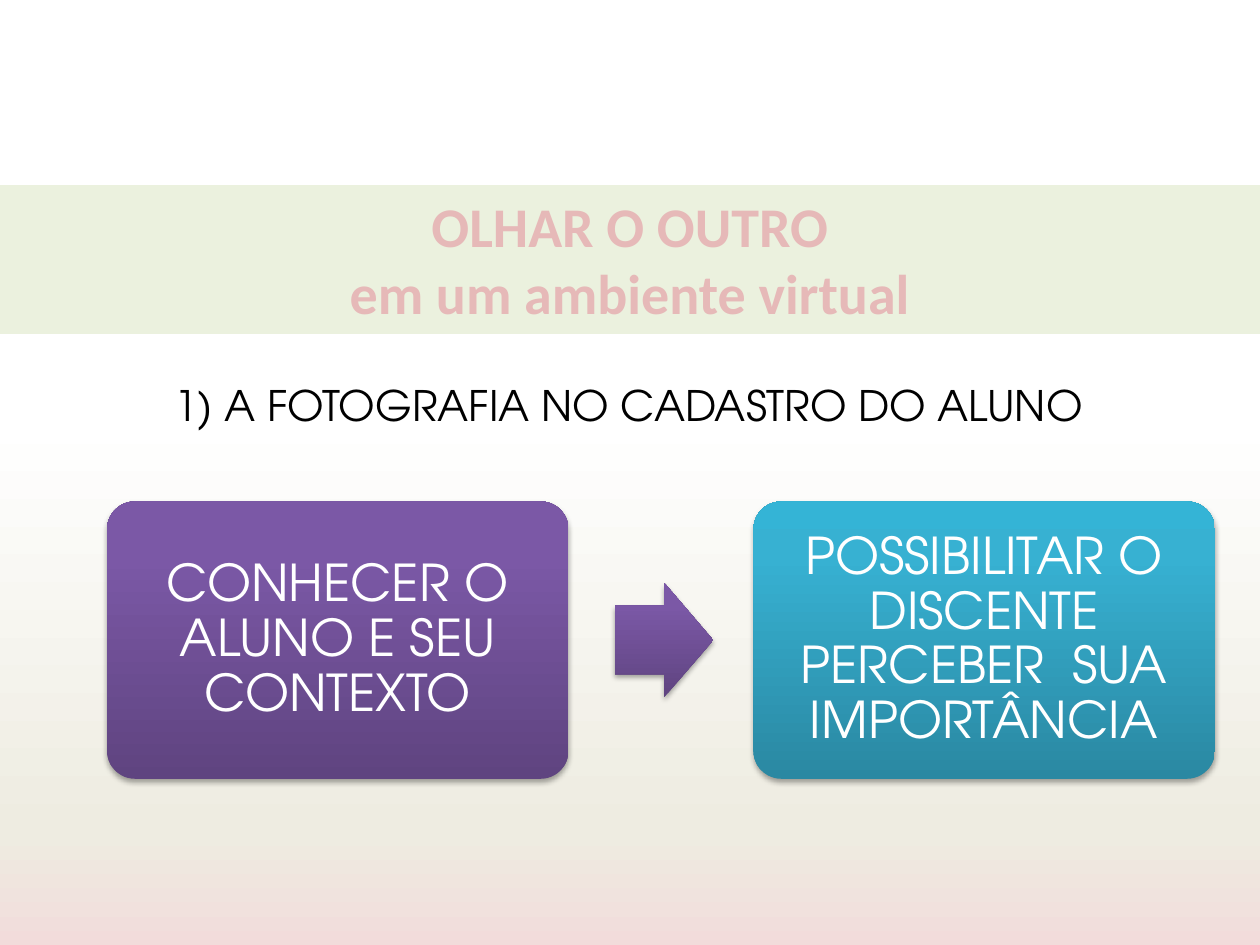
from dataclasses import dataclass

from lxml.etree import SubElement
from pptx import Presentation
from pptx.dml.color import RGBColor
from pptx.enum.shapes import MSO_SHAPE
from pptx.enum.text import MSO_ANCHOR, MSO_AUTO_SIZE, PP_ALIGN
from pptx.oxml import parse_xml
from pptx.oxml.ns import nsdecls, qn
from pptx.util import Cm, Pt


@dataclass(frozen=True)
class Theme:
    heading_font: str = "Calibri"
    body_font: str = "TeX Gyre Adventor"
    heading_size: int = 32
    topic_size: int = 24
    step_size: int = 29
    band: str = "EBF1DE"
    heading: str = "E6B9B8"
    heading_outline: str = "C0504D"
    topic: str = "000000"
    step_text: str = "FFFFFF"
    background: tuple = ((44, "FFFFFF"), (88, "EEECE1"), (100, "F2DCDB"))
    purple: tuple = ((0, "5F4480"), (80, "7B58A6"), (100, "7C57A8"))
    teal: tuple = ((0, "2A88A2"), (80, "37B1D2"), (100, "34B4D6"))


theme = Theme()


def set_gradient(fill, element, stops, angle):
    fill.gradient()
    fill.gradient_angle = angle
    stop_list = element.find(".//" + qn("a:gsLst"))
    stop_list.clear()
    for position, color in stops:
        stop = SubElement(stop_list, qn("a:gs"), pos=str(position * 1000))
        SubElement(stop, qn("a:srgbClr"), val=color)


def write_lines(frame, lines, font_name, size, color, bold=False):
    frame.word_wrap = True
    frame.text = "\n".join(lines)
    for paragraph in frame.paragraphs:
        paragraph.alignment = PP_ALIGN.CENTER
        paragraph.font.name = font_name
        paragraph.font.size = Pt(size)
        paragraph.font.bold = bold
        paragraph.font.color.rgb = RGBColor.from_string(color)


prs = Presentation()
prs.slide_width, prs.slide_height = Cm(25.4), Cm(19.05)
slide = prs.slides.add_slide(prs.slide_layouts[5])
set_gradient(slide.background.fill, slide.element, theme.background, 270)

# Heading band
heading = slide.shapes.title
heading.left, heading.top = Cm(0), Cm(3.73)
heading.width, heading.height = prs.slide_width, Cm(3)
heading.fill.solid()
heading.fill.fore_color.rgb = RGBColor.from_string(theme.band)
write_lines(heading.text_frame, ["OLHAR O OUTRO", "em um ambiente virtual"],
            theme.heading_font, theme.heading_size, theme.heading, bold=True)
heading.text_frame.vertical_anchor = MSO_ANCHOR.TOP
heading.text_frame.auto_size = MSO_AUTO_SIZE.SHAPE_TO_FIT_TEXT
for paragraph in heading.text_frame.paragraphs:
    outline = parse_xml(
        f'<a:ln {nsdecls("a")} w="{Pt(1.75)}"><a:solidFill>'
        f'<a:srgbClr val="{theme.heading_outline}"/></a:solidFill></a:ln>')
    paragraph._p.find(".//" + qn("a:defRPr")).insert(0, outline)

# Topic
topic = slide.shapes.add_textbox(Cm(0), Cm(7.52), Cm(25.35), Cm(1.27))
write_lines(topic.text_frame, ["1) A FOTOGRAFIA NO CADASTRO DO ALUNO"],
            theme.body_font, theme.topic_size, theme.topic)

# Two steps joined by a block arrow
step_top, step_width, step_height = 10.11, 9.3, 5.59
arrow_height = 2.31
arrow_top = step_top + (step_height - arrow_height) / 2
flow = [
    (MSO_SHAPE.ROUNDED_RECTANGLE, 2.16, step_top, step_width, step_height,
     (0.1,), theme.purple, "CONHECER O ALUNO E SEU CONTEXTO"),
    (MSO_SHAPE.RIGHT_ARROW, 12.4, arrow_top, 1.98, arrow_height,
     (0.6, 0.5), theme.purple, None),
    (MSO_SHAPE.ROUNDED_RECTANGLE, 15.19, step_top, step_width, step_height,
     (0.1,), theme.teal, "POSSIBILITAR O DISCENTE PERCEBER  SUA IMPORTÂNCIA"),
]
for preset, left, top, width, height, adjustments, stops, words in flow:
    part = slide.shapes.add_shape(preset, Cm(left), Cm(top), Cm(width), Cm(height))
    for index, value in enumerate(adjustments):
        part.adjustments[index] = value
    set_gradient(part.fill, part.element, stops, 90)
    part.line.fill.background()

    # Soft shadow below the shape
    part.shadow.inherit = False
    part.element.spPr.find(qn("a:effectLst")).append(parse_xml(
        f'<a:outerShdw {nsdecls("a")} blurRad="{Pt(3.1)}" dist="{Pt(1.8)}" '
        'dir="5400000" rotWithShape="0"><a:srgbClr val="000000">'
        '<a:alpha val="35000"/></a:srgbClr></a:outerShdw>'))

    if words:
        frame = part.text_frame
        frame.margin_left = frame.margin_right = Cm(0.3)
        frame.margin_top = frame.margin_bottom = Cm(0.3)
        frame.vertical_anchor = MSO_ANCHOR.MIDDLE
        write_lines(frame, [words], theme.body_font, theme.step_size, theme.step_text)
        frame.paragraphs[0].line_spacing = 0.9

prs.save("out.pptx")
